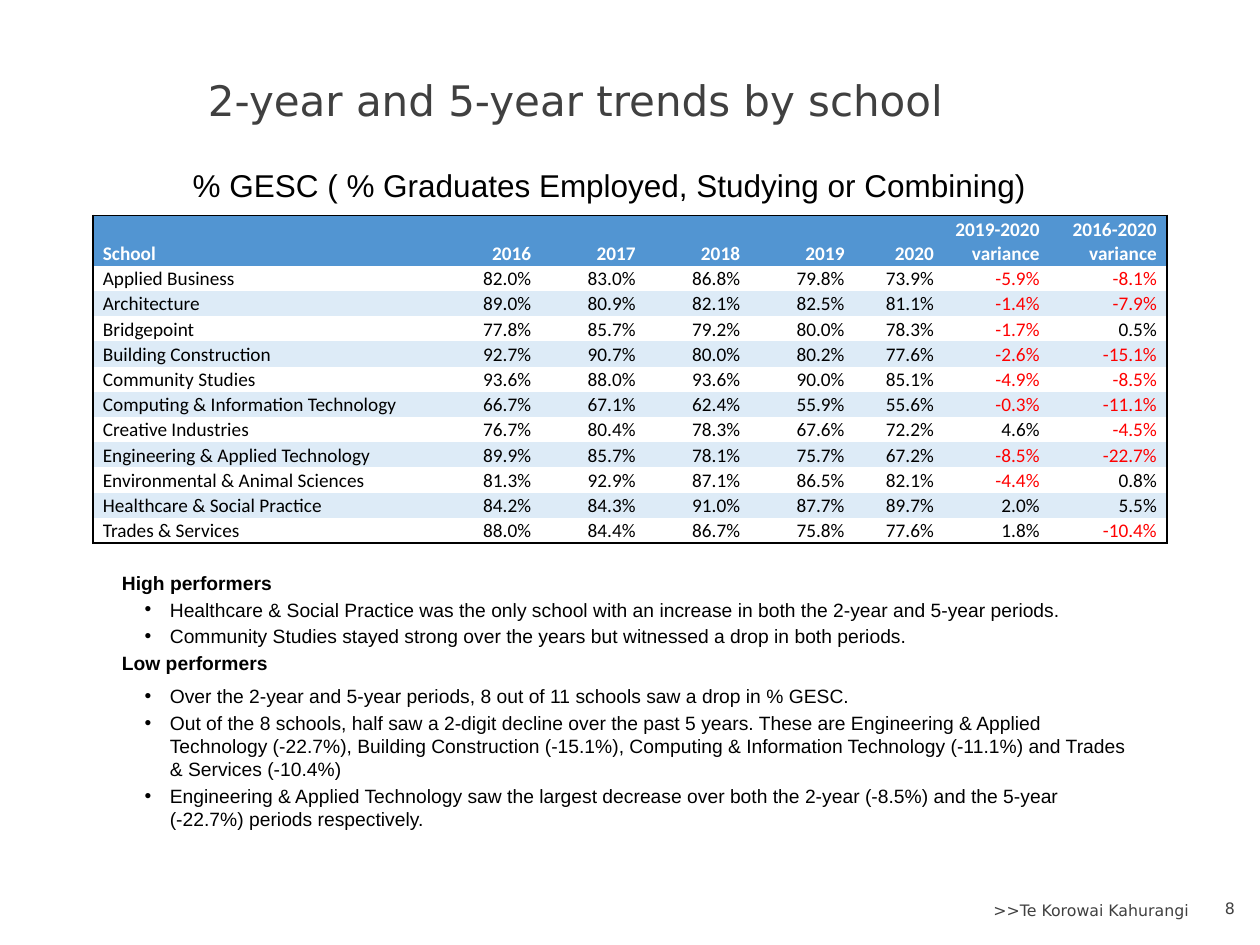
from pptx import Presentation
from pptx.dml.color import RGBColor
from pptx.enum.text import MSO_ANCHOR as Anchor, MSO_AUTO_SIZE as AutoSize, PP_ALIGN as Align
from pptx.oxml.ns import qn
from pptx.util import Pt
from lxml.etree import SubElement

BLACK = RGBColor(0x00, 0x00, 0x00)
WHITE = RGBColor(0xFF, 0xFF, 0xFF)
GREY = RGBColor(0x40, 0x40, 0x40)
RED = RGBColor(0xFF, 0x00, 0x00)
HEADER_BLUE = RGBColor(0x52, 0x95, 0xD2)
BAND_BLUE = RGBColor(0xDD, 0xEB, 0xF7)

COLUMN_WIDTHS = [196.6] + [59.7] * 4 + [51.1, 60.4, 67]
HEADER_HEIGHT, ROW_HEIGHT = 28.8, 14.4
HEADINGS = ["School", "2016", "2017", "2018", "2019", "2020",
            "2019-2020 variance", "2016-2020 variance"]
SCHOOLS = [
    ("Applied Business", 82.0, 83.0, 86.8, 79.8, 73.9, -5.9, -8.1),
    ("Architecture", 89.0, 80.9, 82.1, 82.5, 81.1, -1.4, -7.9),
    ("Bridgepoint", 77.8, 85.7, 79.2, 80.0, 78.3, -1.7, 0.5),
    ("Building Construction", 92.7, 90.7, 80.0, 80.2, 77.6, -2.6, -15.1),
    ("Community Studies", 93.6, 88.0, 93.6, 90.0, 85.1, -4.9, -8.5),
    ("Computing & Information Technology", 66.7, 67.1, 62.4, 55.9, 55.6, -0.3, -11.1),
    ("Creative Industries", 76.7, 80.4, 78.3, 67.6, 72.2, 4.6, -4.5),
    ("Engineering & Applied Technology", 89.9, 85.7, 78.1, 75.7, 67.2, -8.5, -22.7),
    ("Environmental & Animal Sciences", 81.3, 92.9, 87.1, 86.5, 82.1, -4.4, 0.8),
    ("Healthcare & Social Practice", 84.2, 84.3, 91.0, 87.7, 89.7, 2.0, 5.5),
    ("Trades & Services", 88.0, 84.4, 86.7, 75.8, 77.6, 1.8, -10.4),
]
FINDINGS = [
    ("High performers", 0, [
        "Healthcare & Social Practice was the only school with an increase in both "
        "the 2-year and 5-year periods.",
        "Community Studies stayed strong over the years but witnessed a drop in both periods.",
    ]),
    ("Low performers", 3, [
        "Over the 2-year and 5-year periods, 8 out of 11 schools saw a drop in % GESC.",
        "Out of the 8 schools, half saw a 2-digit decline over the past 5 years. These are "
        "Engineering & Applied Technology (-22.7%), Building Construction (-15.1%), Computing & "
        "Information Technology (-11.1%) and Trades & Services (-10.4%)",
        "Engineering & Applied Technology saw the largest decrease over both the 2-year (-8.5%) "
        "and the 5-year (-22.7%) periods respectively.",
    ]),
]


def write(paragraph, text, *, font="Arial", size=11, color=BLACK, bold=False,
          align=Align.LEFT, before=0, after=0, bullet=False):
    """Fill a paragraph with one formatted run."""
    if bullet:
        properties = paragraph._p.get_or_add_pPr()
        properties.set("marL", str(Pt(27.4)))
        properties.set("indent", str(Pt(-14.4)))
    paragraph.alignment = align
    paragraph.space_before, paragraph.space_after = Pt(before), Pt(after)
    if bullet:
        SubElement(properties, qn("a:buFont"), typeface="Arial")
        SubElement(properties, qn("a:buChar"), char="•")
    run = paragraph.add_run()
    run.text = text
    run.font.name, run.font.size, run.font.bold = font, Pt(size), bold
    run.font.color.rgb = color


def place(shape, left, top, width, height):
    """Move a shape into its box."""
    shape.left, shape.top = Pt(left), Pt(top)
    shape.width, shape.height = Pt(width), Pt(height)


def add_frame(slide, box, anchor=Anchor.TOP):
    """Add a wrapping text box and return its text frame."""
    frame = slide.shapes.add_textbox(*map(Pt, box)).text_frame
    frame.word_wrap, frame.vertical_anchor = True, anchor
    return frame


def add_title(slide, box):
    """Place and format the slide title."""
    title = slide.shapes.title
    place(title, *box)
    frame = title.text_frame
    frame.auto_size, frame.vertical_anchor = AutoSize.NONE, Anchor.MIDDLE
    write(frame.paragraphs[0], "2-year and 5-year trends by school",
          font="DejaVu Sans", size=24, color=GREY)


def add_caption(slide, box):
    """Write the heading above the table."""
    write(add_frame(slide, box).paragraphs[0],
          "% GESC ( % Graduates Employed, Studying or Combining)", size=18)


def set_borders(cell, outer_sides):
    """Rule the outer sides of a cell and clear the others."""
    properties = cell._tc.get_or_add_tcPr()
    for side in "LRTB":
        line = SubElement(properties, qn(f"a:ln{side}"), w=str(Pt(1)))
        if side in outer_sides:
            solid = SubElement(line, qn("a:solidFill"))
            SubElement(solid, qn("a:srgbClr"), val=str(BLACK))
        else:
            SubElement(line, qn("a:noFill"))


def format_cell(cell, value, row, column):
    """Write one table cell with its fill, borders and colour."""
    edges = {"L": column == 0, "R": column == len(HEADINGS) - 1,
             "T": row == 0, "B": row == len(SCHOOLS)}
    set_borders(cell, [side for side, outer in edges.items() if outer])
    if row and row % 2:
        cell.fill.background()
    else:
        cell.fill.solid()
        cell.fill.fore_color.rgb = BAND_BLUE if row else HEADER_BLUE
    cell.vertical_anchor = Anchor.BOTTOM
    cell.margin_left = cell.margin_right = Pt(5.76)
    cell.margin_top, cell.margin_bottom = Pt(0.72), Pt(0)
    numeric = isinstance(value, float)
    color = RED if numeric and value < 0 else BLACK
    write(cell.text_frame.paragraphs[0], f"{value:.1f}%" if numeric else value,
          font="Calibri", color=color if row else WHITE, bold=row == 0,
          align=Align.RIGHT if column else Align.LEFT)


def add_school_table(slide, left, top):
    """Add the table of yearly rates and variances by school."""
    rows = [HEADINGS, *SCHOOLS]
    heights = [HEADER_HEIGHT] + [ROW_HEIGHT] * len(SCHOOLS)
    box = left, top, sum(COLUMN_WIDTHS), sum(heights)
    table = slide.shapes.add_table(len(rows), len(HEADINGS), *map(Pt, box)).table
    table.first_row = table.horz_banding = False
    for column, width in zip(table.columns, COLUMN_WIDTHS):
        column.width = Pt(width)
    for row, (values, height) in enumerate(zip(rows, heights)):
        table.rows[row].height = Pt(height)
        for column, value in enumerate(values):
            format_cell(table.cell(row, column), value, row, column)


def add_findings(slide, box):
    """List the high and low performers."""
    frame = add_frame(slide, box)
    paragraph = frame.paragraphs[0]
    for group, (heading, after, points) in enumerate(FINDINGS):
        if group:
            paragraph = frame.add_paragraph()
        write(paragraph, heading, bold=True, before=2.2 if group else 0, after=after)
        for point in points:
            write(frame.add_paragraph(), point, before=2.2, bullet=True)


def add_footer(slide, name_box, number_box):
    """Write the footer name and the slide number."""
    for text, box in ((">>Te Korowai Kahurangi", name_box), ("8", number_box)):
        write(add_frame(slide, box, Anchor.MIDDLE).paragraphs[0], text,
              font="DejaVu Sans", size=9, color=GREY, align=Align.RIGHT)


def main():
    """Build the slide and save it."""
    deck = Presentation()
    deck.slide_width, deck.slide_height = Pt(720), Pt(540)
    slide = deck.slides.add_slide(deck.slide_layouts[5])
    add_title(slide, (111.6, 36.7, 566.6, 40.3))
    add_footer(slide, (387.4, 511.2, 298.8, 18), (679.7, 509.8, 33.1, 18))
    add_findings(slide, (62.6, 322.6, 590, 176.4))
    add_caption(slide, (103, 91.4, 512.6, 28.8))
    add_school_table(slide, 53, 123.1)
    deck.save("out.pptx")


if __name__ == "__main__":
    main()
